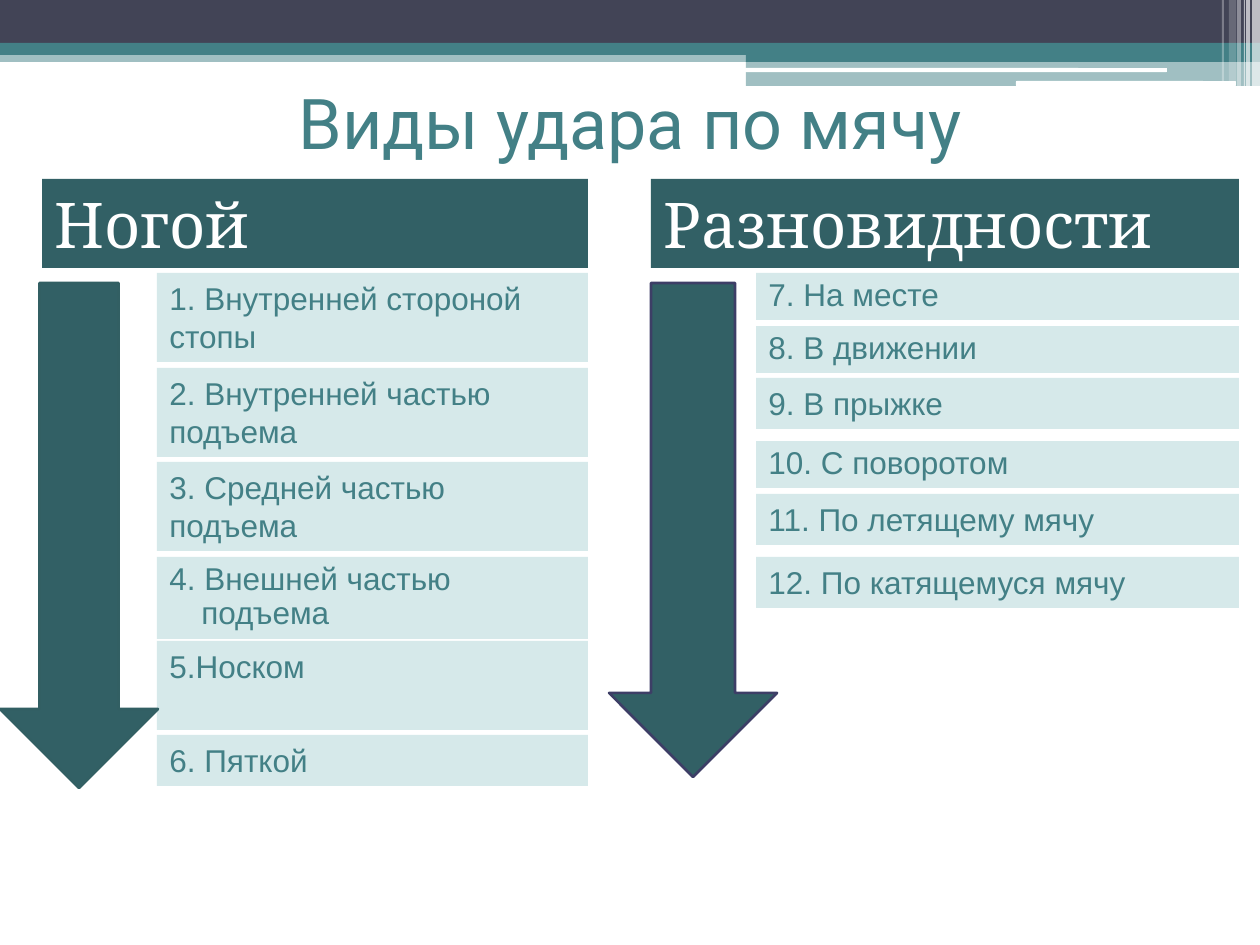
from pptx import Presentation
from pptx.dml.color import RGBColor
from pptx.enum.shapes import MSO_SHAPE as Shape
from pptx.enum.text import MSO_ANCHOR as Anchor, MSO_AUTO_SIZE as AutoSize, PP_ALIGN as Align
from pptx.oxml.ns import qn
from pptx.util import Pt
from lxml import etree

SCALE = 914400 / 126
COLORS = {
    "white": "FFFFFF",
    "navy": "424456",
    "teal": "438086",
    "dark": "326065",
    "pale": "D6E9EA",
    "left_edge": "325F63",
    "right_edge": "3D3E66",
}
BANDS = [
    (0, 50, 1260, 12, "teal", 50),
    (0, 0, 1260, 43, "navy", 100),
    (0, 43, 1260, 12, "teal", 100),
    (746, 49, 514, 13, "teal", 100),
    (746, 61, 514, 25, "teal", 50),
]
ROUNDED_LINES = [(745, 68, 422, 4), (1016, 81, 220, 5)]
STRIPES = [
    (1252, 8, 86, 65),
    (1246, 4, 86, 65),
    (1244, 1, 86, 60),
    (1237, 4, 86, 40),
    (1229, 7, 81, 20),
    (1222, 2, 81, 30),
]
FOOT_ROWS = [
    ("1. Внутренней стороной стопы", 273, 89, 0),
    ("2. Внутренней частью подъема", 368, 89, 0),
    ("3. Средней частью подъема", 462, 89, 0),
    ("4. Внешней частью подъема", 557, 82, 32),
    ("5.Носком", 641, 89, 0),
    ("6. Пяткой", 735, 51, 0),
]
VARIETY_ROWS = [
    ("7. На месте", 273, 47, 24),
    ("8. В движении", 326, 47, 32),
    ("9. В прыжке", 378, 51, 0),
    ("10. С поворотом", 441, 47, 32),
    ("11. По летящему мячу", 494, 51, 0),
    ("12. По катящемуся мячу", 557, 51, 0),
]


def px(length):
    return round(length * SCALE)


def color(name):
    return RGBColor.from_string(COLORS[name])


def add_block(slide, kind, box, fill, opacity=100, edge=None):
    shape = slide.shapes.add_shape(kind, *map(px, box))
    shape.shadow.inherit = False
    shape.fill.solid()
    shape.fill.fore_color.rgb = color(fill)
    if opacity < 100:
        fill_color = shape.fill._xPr.find(qn("a:solidFill"))[0]
        etree.SubElement(fill_color, qn("a:alpha")).set("val", str(opacity * 1000))
    if edge:
        shape.line.color.rgb = color(edge)
        shape.line.width = Pt(1.5)
    else:
        shape.line.fill.background()
    return shape


def add_run(paragraph, text, font, size, font_color):
    run = paragraph.add_run()
    run.text = text
    run.font.name = font
    run.font.size = Pt(size)
    run.font.color.rgb = color(font_color)


def add_label(slide, box, fill, text, font, size, font_color, hanging=0):
    shape = add_block(slide, Shape.RECTANGLE, box, fill)
    frame = shape.text_frame
    frame.word_wrap = True
    frame.auto_size = AutoSize.NONE
    frame.vertical_anchor = Anchor.TOP
    paragraph = frame.paragraphs[0]
    paragraph.alignment = Align.LEFT
    if hanging:
        paragraph.level = 1
        paragraph.line_spacing = 0.9
        paragraph.space_after = Pt(2.7)
        properties = paragraph._p.get_or_add_pPr()
        properties.set("marL", str(px(hanging)))
        properties.set("indent", str(-px(hanging)))
    add_run(paragraph, text, font, size, font_color)


def add_header_decoration(slide):
    for *box, fill, opacity in BANDS:
        add_block(slide, Shape.RECTANGLE, box, fill, opacity)
    for box in ROUNDED_LINES:
        add_block(slide, Shape.ROUNDED_RECTANGLE, box, "white")
    for left, width, height, opacity in STRIPES:
        add_block(slide, Shape.RECTANGLE, (left, 0, width, height), "white", opacity)


def add_title(slide, text):
    title = slide.shapes.title
    title.left, title.top, title.width, title.height = map(px, (63, 42, 1134, 158))
    title.text_frame.vertical_anchor = Anchor.MIDDLE
    paragraph = title.text_frame.paragraphs[0]
    paragraph.alignment = Align.CENTER
    add_run(paragraph, text, "Roboto", 40, "teal")


def add_column(slide, heading, left, row_left, right, rows, arrow_box, arrow_edge):
    heading_box = (left, 179, right - left, 89)
    add_label(slide, heading_box, "dark", heading, "Cambria", 36, "white")
    for text, top, height, hanging in rows:
        row_box = (row_left, top, right - row_left, height)
        add_label(slide, row_box, "pale", text, "Arial", 18, "teal", hanging)
    add_block(slide, Shape.DOWN_ARROW, arrow_box, "dark", edge=arrow_edge)


def main():
    presentation = Presentation()
    presentation.slide_width = px(1260)
    presentation.slide_height = px(945)
    slide = presentation.slides.add_slide(presentation.slide_layouts[5])
    add_header_decoration(slide)
    add_title(slide, "Виды удара по мячу")
    add_column(slide, "Ногой", 42, 157, 588, FOOT_ROWS,
               (0, 283, 158, 505), "left_edge")
    add_column(slide, "Разновидности", 651, 756, 1239, VARIETY_ROWS,
               (609, 283, 168, 494), "right_edge")
    presentation.save("out.pptx")


if __name__ == "__main__":
    main()
